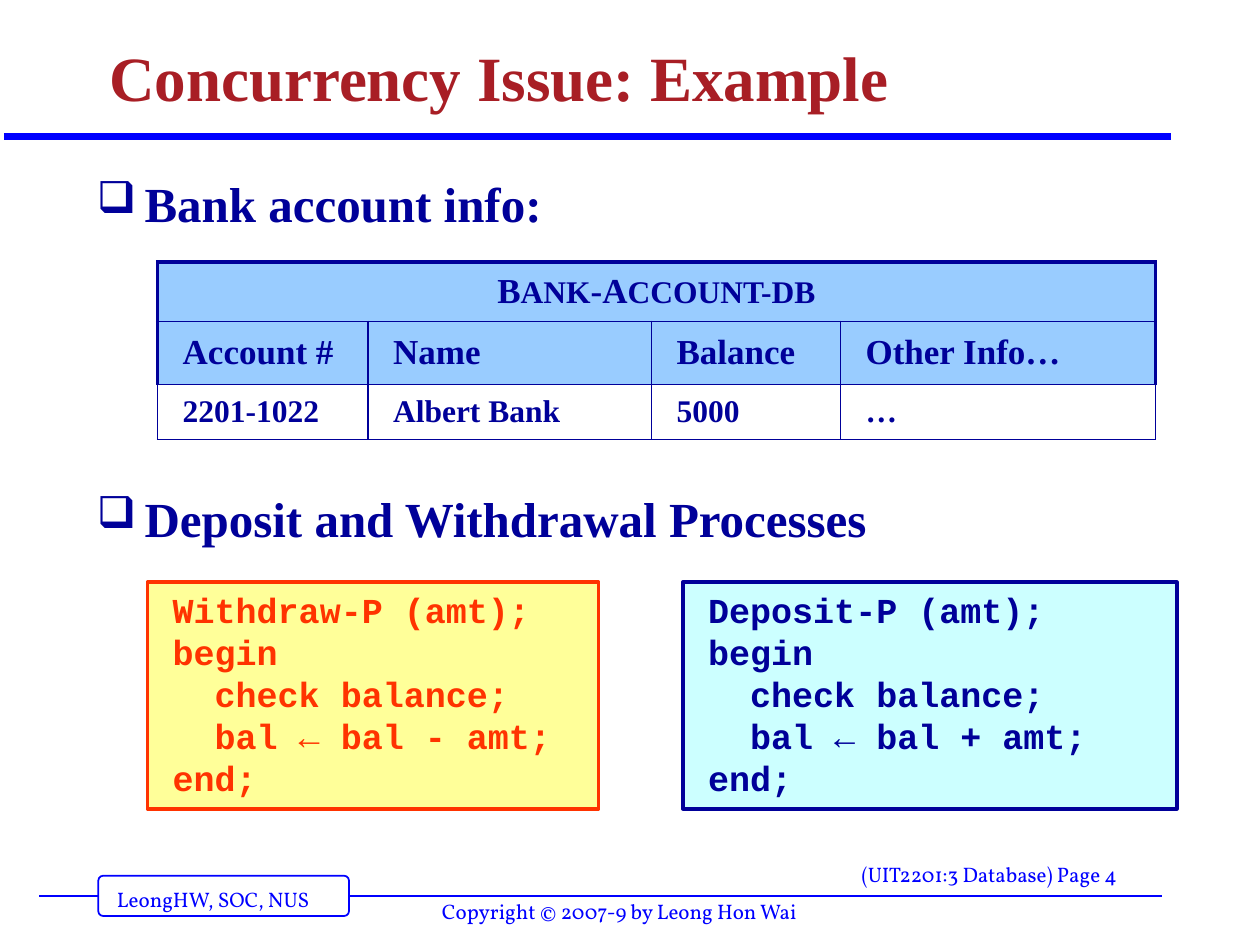
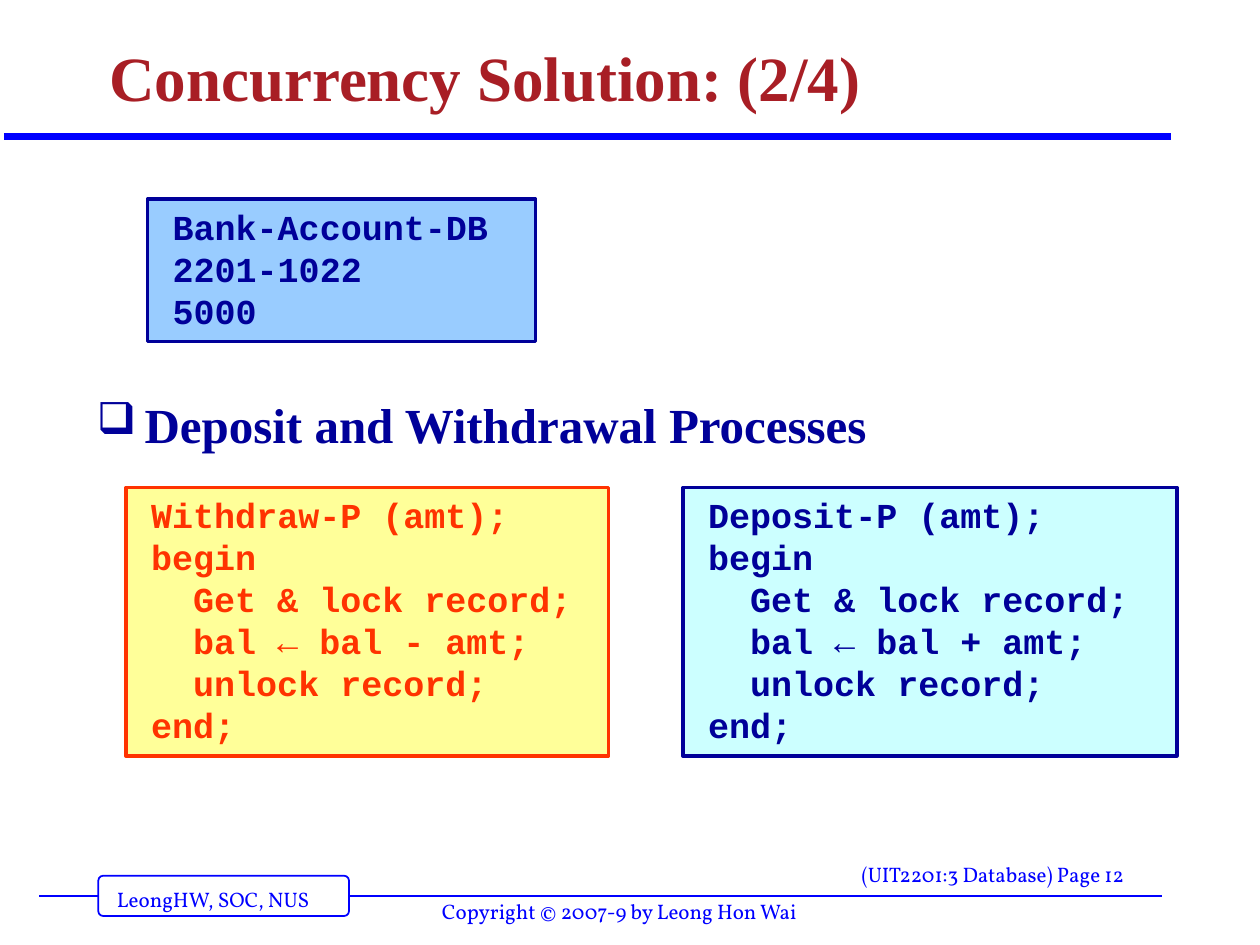
import pptx
import pptx.util
import pptx.dml.color
import pptx.enum.shapes
import pptx.enum.text
import pptx.oxml
import pptx.oxml.ns
from dataclasses import dataclass
from lxml import etree

Inches = pptx.util.Inches
Pt = pptx.util.Pt
Anchor = pptx.enum.text.MSO_ANCHOR
Align = pptx.enum.text.PP_ALIGN
Preset = pptx.enum.shapes.MSO_SHAPE


@dataclass(frozen=True)
class Theme:
    serif: str = "Times New Roman"
    code: str = "Courier New"
    footer: str = "Vollkorn"
    white: str = "FFFFFF"
    crimson: str = "A81E25"
    navy: str = "000099"
    blue: str = "0000FF"
    orange: str = "FF3300"
    yellow: str = "FFFF99"
    cyan: str = "CCFFFF"
    sky: str = "99CCFF"
    title_size: int = 36
    heading_size: int = 28
    body_size: int = 20
    record_size: int = 18
    footer_size: int = 12


THEME = Theme()
CONTENT_LEFT = 0.67
DEPOSIT_LEFT, DEPOSIT_WIDTH = 5.42, 3.92
PROCESSES = "Deposit and Withdrawal Processes"


def rgb(color):
    return pptx.dml.color.RGBColor.from_string(color)


def add_xml(parent, tag, **attributes):
    return etree.SubElement(parent, pptx.oxml.ns.qn(tag), attributes)


def add_run(paragraph, text, size, color, font=THEME.serif, bold=True):
    run = paragraph.add_run()
    run.text = text
    run.font.size = Pt(size)
    run.font.name = font
    run.font.bold = bold
    run.font.color.rgb = rgb(color)


def space_before_half(paragraph):
    spacing = add_xml(paragraph._p.get_or_add_pPr(), "a:spcBef")
    add_xml(spacing, "a:spcPct", val="50000")


def add_text_box(slide, box, anchor=Anchor.TOP):
    frame = slide.shapes.add_textbox(*map(Inches, box)).text_frame
    frame.word_wrap = True
    frame.vertical_anchor = anchor
    return frame


def add_panel(slide, preset, box, fill, line, weight):
    panel = slide.shapes.add_shape(preset, *map(Inches, box))
    panel.shadow.inherit = False
    panel.fill.solid()
    panel.fill.fore_color.rgb = rgb(fill)
    panel.line.color.rgb = rgb(line)
    panel.line.width = Pt(weight)
    return panel


def add_rule(slide, left, right, y, weight):
    rule = slide.shapes.add_connector(
        pptx.enum.shapes.MSO_CONNECTOR.STRAIGHT,
        Inches(left), Inches(y), Inches(right), Inches(y))
    rule.line.color.rgb = rgb(THEME.blue)
    rule.line.width = Pt(weight)
    add_xml(rule._element.spPr, "a:effectLst")


def add_frame(slide, title, page):
    add_rule(slide, 0.31, 9.22, 7.11, 1)
    badge = add_panel(slide, Preset.ROUNDED_RECTANGLE,
                      (0.78, 6.95, 1.99, 0.32), THEME.white, THEME.blue, 1)
    badge.adjustments[0] = 0.125
    add_rule(slide, 0.03, 9.29, 1.08, 4)
    for text, box in (
        ("LeongHW, SOC, NUS", (0.83, 6.99, 1.82, 0.3)),
        (f"(UIT2201:3 Database) Page {page}", (6.74, 6.79, 2.42, 0.3)),
        ("Copyright © 2007-9 by Leong Hon Wai", (3.41, 7.08, 3.07, 0.3)),
    ):
        note = add_text_box(slide, box).paragraphs[0]
        add_run(note, text, THEME.footer_size, THEME.blue, THEME.footer, False)
    heading = add_text_box(slide, (0.77, 0.08, 8.5, 0.88), Anchor.BOTTOM).paragraphs[0]
    heading.line_spacing = 0.9
    add_run(heading, title, THEME.title_size, THEME.crimson)


def add_heading(slide, text, top):
    heading = add_text_box(slide, (CONTENT_LEFT, top, 8.53, 0.75)).paragraphs[0]
    space_before_half(heading)
    props = heading._p.get_or_add_pPr()
    props.set("marL", str(Inches(0.38)))
    props.set("indent", str(-Inches(0.38)))
    add_xml(add_xml(props, "a:buClr"), "a:srgbClr", val=THEME.navy)
    add_xml(props, "a:buSzPct", val="90000")
    add_xml(props, "a:buChar", char="❑")
    add_run(heading, text, THEME.heading_size, THEME.navy)


def add_code(slide, box, lines, fill, color, indented=()):
    frame = add_panel(slide, Preset.RECTANGLE, box, fill, color, 2).text_frame
    frame.word_wrap = True
    frame.vertical_anchor = Anchor.TOP
    frame.margin_left = frame.margin_right = Inches(0.2)
    for index, line in enumerate(lines):
        paragraph = frame.paragraphs[0] if index == 0 else frame.add_paragraph()
        paragraph.alignment = Align.LEFT
        if line in indented:
            paragraph._p.get_or_add_pPr().set("marL", str(Pt(24)))
        add_run(paragraph, line, THEME.body_size, color, THEME.code)


def add_processes(slide, top, height, withdraw_left, withdraw_width, steps):
    for name, sign, left, width, fill, color in (
        ("Withdraw", "-", withdraw_left, withdraw_width, THEME.yellow, THEME.orange),
        ("Deposit", "+", DEPOSIT_LEFT, DEPOSIT_WIDTH, THEME.cyan, THEME.navy),
    ):
        body = [step.format(sign=sign) for step in steps]
        lines = [f"{name}-P (amt);", "begin", *body, "end;"]
        add_code(slide, (left, top, width, height), lines, fill, color, body)


def style_cell(cell, runs, fill, weights):
    cell.margin_left = cell.margin_right = Inches(0.2)
    cell.margin_top = cell.margin_bottom = Inches(0.05)
    cell.vertical_anchor = Anchor.MIDDLE
    paragraph = cell.text_frame.paragraphs[0]
    space_before_half(paragraph)
    for text, size in runs:
        add_run(paragraph, text, size, THEME.navy)
    props = cell._tc.get_or_add_tcPr()
    for side, weight in zip("LRTB", weights):
        border = add_xml(props, f"a:ln{side}", w=str(Pt(weight)))
        add_xml(add_xml(border, "a:solidFill"), "a:srgbClr", val=THEME.navy)
    if fill:
        cell.fill.solid()
        cell.fill.fore_color.rgb = rgb(fill)
    else:
        cell.fill.background()


def add_account_table(slide, left, top):
    widths, heights = (1.67, 2.25, 1.5, 2.5), (0.47, 0.5, 0.44)
    big, small = THEME.body_size, THEME.record_size
    caption = [("B", big), ("ANK", small), ("-A", big), ("CCOUNT-DB", small)]
    fields = ("Account #", "Name", "Balance", "Other Info…")
    record = ("2201-1022", "Albert Bank", "5000", "…")
    rows = (
        [caption, [], [], []],
        [[(field, big)] for field in fields],
        [[(value, small)] for value in record],
    )
    table = slide.shapes.add_table(
        len(heights), len(widths), Inches(left), Inches(top),
        Inches(sum(widths)), Inches(sum(heights))).table
    table.first_row = table.horz_banding = False
    for column, width in zip(table.columns, widths):
        column.width = Inches(width)
    for row, height in zip(table.rows, heights):
        row.height = Inches(height)
    last = len(widths) - 1
    for r, row in enumerate(rows):
        header = r < 2
        for c, runs in enumerate(row):
            weights = [2.25 if thick else 1 for thick in
                       (header and c == 0, header and c in (last, last * r), r == 0, False)]
            style_cell(table.cell(r, c), runs, THEME.sky if header else None, weights)
    table.cell(0, 0).merge(table.cell(0, last))
    table.cell(0, 0).text_frame.paragraphs[0].alignment = Align.CENTER


def build_example(slide):
    add_frame(slide, "Concurrency Issue: Example", 4)
    add_heading(slide, "Bank account info:", 1.33)
    add_processes(slide, 4.62, 1.8, 1.17, 3.58,
                  ("check balance;", "bal ← bal {sign} amt;"))
    add_heading(slide, PROCESSES, 3.83)
    add_account_table(slide, 1.25, 2.08)


def build_solution(slide):
    add_frame(slide, "Concurrency Solution: (2/4)", 12)
    add_processes(slide, 3.87, 2.13, 1, 3.83,
                  ("Get & lock record;", "bal ← bal {sign} amt;", "unlock record;"))
    add_heading(slide, PROCESSES, 3.08)
    add_code(slide, (1.17, 1.58, 3.08, 1.13),
             ("Bank-Account-DB", "2201-1022", "5000"), THEME.sky, THEME.navy)


def main():
    deck = pptx.Presentation()
    deck.slide_width, deck.slide_height = Inches(10), Inches(7.5)
    for build in (build_example, build_solution):
        build(deck.slides.add_slide(deck.slide_layouts[6]))
    deck.save("out.pptx")


if __name__ == "__main__":
    main()
